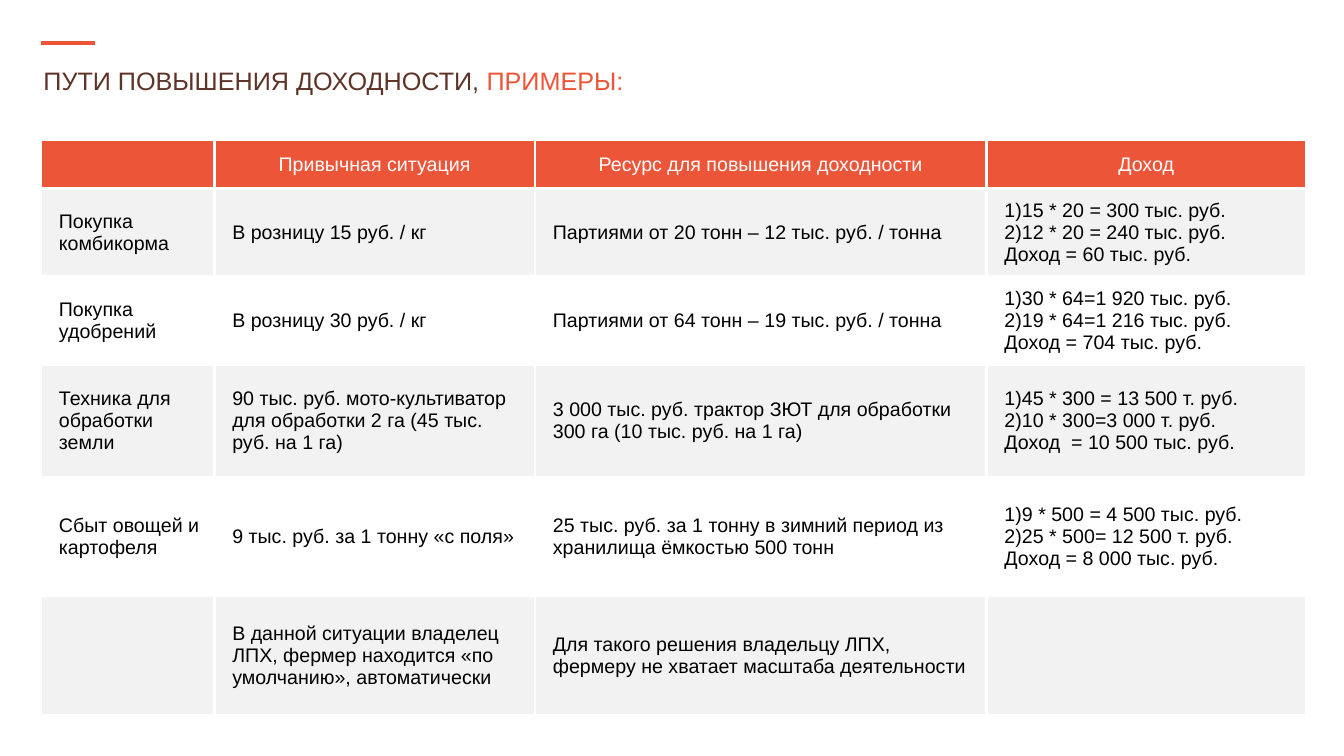
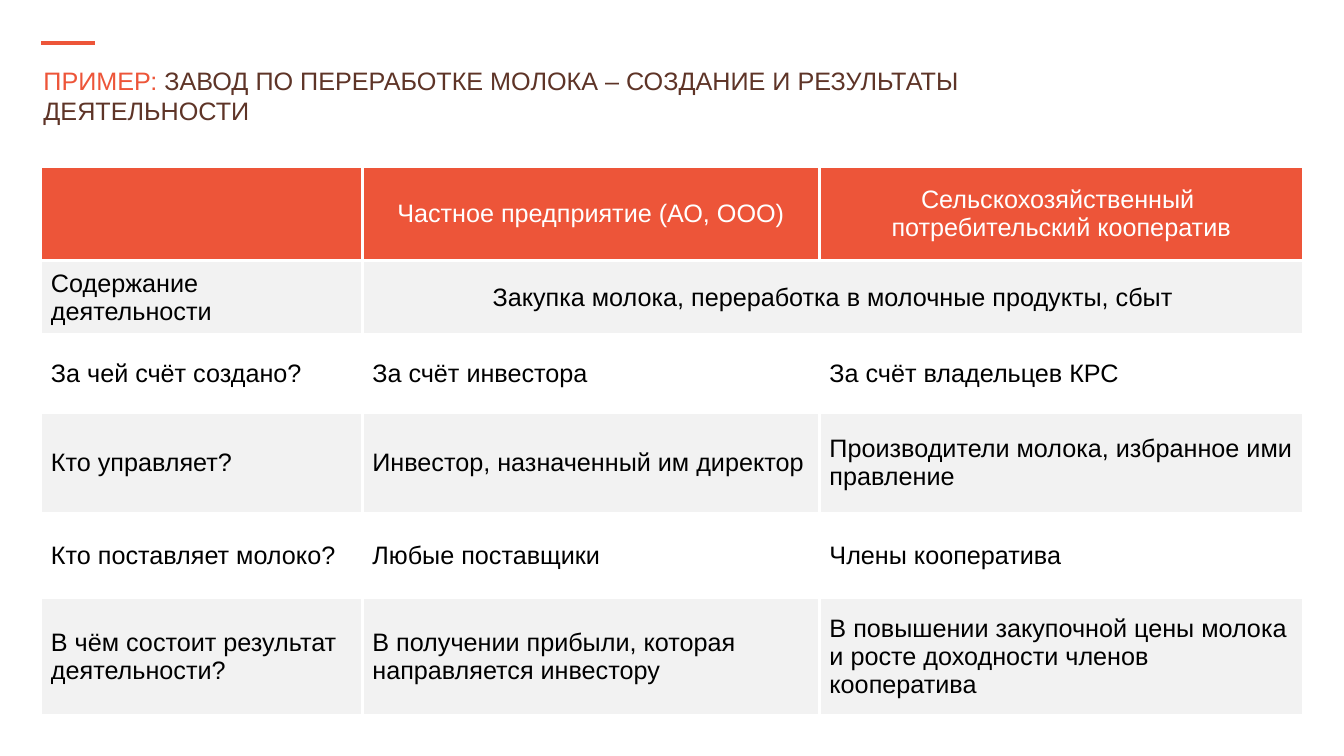
"""Builds two slides that compare ways of raising farm income."""
from lxml import etree
from pptx import Presentation
from pptx.dml.color import RGBColor
from pptx.enum.shapes import MSO_CONNECTOR
from pptx.enum.text import MSO_ANCHOR, MSO_AUTO_SIZE, PP_ALIGN
from pptx.oxml.ns import qn
from pptx.util import Cm, Pt

STRAIGHT = MSO_CONNECTOR.STRAIGHT
TOP, MIDDLE = MSO_ANCHOR.TOP, MSO_ANCHOR.MIDDLE
LEFT, CENTER = PP_ALIGN.LEFT, PP_ALIGN.CENTER
NO_AUTOFIT = MSO_AUTO_SIZE.NONE

COLORS = {
    "accent": "ED5539",
    "title": "5E3427",
    "band": "F2F2F2",
    "white": "FFFFFF",
    "text": "000000",
}
FONT = "Arial"
TITLE_ONLY = 5
TABLE_LEFT = 1.03

INCOME_ROWS = [
    ["", "Привычная ситуация", "Ресурс для повышения доходности", "Доход"],
    ["Покупка комбикорма", "В розницу 15 руб. / кг",
     "Партиями от 20 тонн – 12 тыс. руб. / тонна",
     "15 * 20 = 300 тыс. руб.\n12 * 20 = 240 тыс. руб.\nДоход = 60 тыс. руб."],
    ["Покупка удобрений", "В розницу 30 руб. / кг",
     "Партиями от 64 тонн – 19 тыс. руб. / тонна",
     "30 * 64=1 920 тыс. руб.\n19 * 64=1 216 тыс. руб.\nДоход = 704 тыс. руб."],
    ["Техника для обработки земли",
     "90 тыс. руб. мото-культиватор для обработки 2 га (45 тыс. руб. на 1 га)",
     "3 000 тыс. руб. трактор ЗЮТ для обработки 300 га (10 тыс. руб. на 1 га)",
     "45 * 300 = 13 500 т. руб.\n10 * 300=3 000 т. руб.\nДоход  = 10 500 тыс. руб."],
    ["Сбыт овощей и картофеля", "9 тыс. руб. за 1 тонну «с поля»",
     "25 тыс. руб. за 1 тонну в зимний период из хранилища ёмкостью 500 тонн",
     "9 * 500 = 4 500 тыс. руб.\n25 * 500= 12 500 т. руб.\nДоход = 8 000 тыс. руб."],
    ["", "В данной ситуации владелец ЛПХ, фермер находится «по умолчанию», автоматически",
     "Для такого решения владельцу ЛПХ, фермеру не хватает масштаба деятельности", ""],
]

DAIRY_ROWS = [
    ["", "Частное предприятие (АО, ООО)",
     "Сельскохозяйственный \nпотребительский кооператив"],
    ["Содержание деятельности",
     "Закупка молока, переработка в молочные продукты, сбыт", None],
    ["За чей счёт создано?", "За счёт инвестора", "За счёт владельцев КРС"],
    ["Кто управляет?", "Инвестор, назначенный им директор",
     "Производители молока, избранное ими правление"],
    ["Кто поставляет молоко?", "Любые поставщики", "Члены кооператива"],
    ["В чём состоит результат деятельности?",
     "В получении прибыли, которая направляется инвестору",
     "В повышении закупочной цены молока и росте доходности членов кооператива"],
]


def rgb(name):
    """Return the named palette colour."""
    return RGBColor.from_string(COLORS[name])


def write_text(paragraph, text, size=18, color="text", align=LEFT, indent=0, numbered=False):
    """Append a formatted run to a paragraph."""
    properties = paragraph._p.get_or_add_pPr()
    properties.set("marL", str(Cm(indent)))
    properties.set("indent", "0")
    if numbered:
        etree.SubElement(properties, qn("a:buAutoNum"), type="arabicParenR")
    paragraph.alignment = align
    run = paragraph.add_run()
    run.text = text
    run.font.name = FONT
    run.font.size = Pt(size)
    run.font.bold = False
    run.font.color.rgb = rgb(color)


class Deck:
    """Holds the presentation style and the current slide."""

    def __init__(self):
        """Start an empty widescreen presentation."""
        self.presentation = Presentation()
        self.presentation.slide_width = Cm(33.87)
        self.presentation.slide_height = Cm(19.05)
        self.slide = None

    def add_slide(self, *title_parts):
        """Add a slide with the accent line and a two-colour title."""
        layout = self.presentation.slide_layouts[TITLE_ONLY]
        self.slide = self.presentation.slides.add_slide(layout)
        self.add_accent_line()
        title = self.slide.shapes.title
        title.left, title.top = Cm(0.84), Cm(1.52)
        title.width, title.height = Cm(25.55), Cm(0.81)
        frame = title.text_frame
        frame.word_wrap = True
        frame.auto_size = NO_AUTOFIT
        frame.vertical_anchor = TOP
        for text, color in title_parts:
            write_text(frame.paragraphs[0], text, color=color)

    def add_accent_line(self):
        """Draw the short line above the title."""
        line = self.slide.shapes.add_connector(STRAIGHT, Cm(1.04), Cm(1.09), Cm(2.4), Cm(1.09))
        line.line.color.rgb = rgb("accent")
        line.line.width = Pt(3)
        etree.SubElement(line._element.spPr, qn("a:effectLst"))

    def add_table(self, rows, top, widths, heights, size, indent=0, numbered_column=None):
        """Add a banded table; None continues the cell on its left."""
        frame = self.slide.shapes.add_table(
            len(rows), len(widths), Cm(TABLE_LEFT), Cm(top), Cm(sum(widths)), Cm(sum(heights)))
        table = frame.table
        for column, width in zip(table.columns, widths):
            column.width = Cm(width)
        for row, height in zip(table.rows, heights):
            row.height = Cm(height)
        for row_index, texts in enumerate(rows):
            for column_index, text in enumerate(texts):
                cell = table.cell(row_index, column_index)
                self.style_cell(cell, row_index)
                if text is None:
                    table.cell(row_index, column_index - 1).merge(cell)
                elif text:
                    header = row_index == 0
                    merged = None in texts[column_index + 1:column_index + 2]
                    self.fill_cell(
                        cell, text, size=size,
                        color="white" if header else "text",
                        align=CENTER if header or merged else LEFT,
                        indent=0 if header else indent,
                        numbered=not header and column_index == numbered_column)

    def style_cell(self, cell, row_index):
        """Set the fill, anchor and white borders of a cell."""
        cell.vertical_anchor = MIDDLE
        cell.fill.solid()
        fill = "accent" if row_index == 0 else "band" if row_index % 2 else "white"
        cell.fill.fore_color.rgb = rgb(fill)
        properties = cell._tc.get_or_add_tcPr()
        for position, side in enumerate(("lnL", "lnR", "lnT", "lnB")):
            border = etree.Element(qn(f"a:{side}"), w=str(Pt(2.25)))
            solid = etree.SubElement(border, qn("a:solidFill"))
            etree.SubElement(solid, qn("a:srgbClr"), val=COLORS["white"])
            properties.insert(position, border)

    def fill_cell(self, cell, text, numbered=False, **style):
        """Write the lines of a cell, numbering all but the last if asked."""
        lines = text.split("\n")
        frame = cell.text_frame
        for index, line in enumerate(lines):
            paragraph = frame.add_paragraph() if index else frame.paragraphs[0]
            write_text(paragraph, line, numbered=numbered and index < len(lines) - 1, **style)


def main():
    """Build and save the presentation."""
    deck = Deck()
    deck.add_slide(("ПУТИ ПОВЫШЕНИЯ ДОХОДНОСТИ, ", "title"), ("ПРИМЕРЫ:", "accent"))
    deck.add_table(
        INCOME_ROWS, top=3.53, size=14, indent=0.2, numbered_column=3,
        widths=[4.37, 8.08, 11.38, 8.05], heights=[1.22, 2.21, 2.22, 2.84, 3, 3])
    deck.add_slide(
        ("ПРИМЕР: ", "accent"),
        ("ЗАВОД ПО ПЕРЕРАБОТКЕ МОЛОКА – СОЗДАНИЕ И РЕЗУЛЬТАТЫ ДЕЯТЕЛЬНОСТИ", "title"))
    deck.add_table(
        DAIRY_ROWS, top=4.19, size=18,
        widths=[8.1, 11.52, 12.19], heights=[2.38, 1.85, 1.98, 2.53, 2.13, 2.97])
    deck.presentation.save("out.pptx")


if __name__ == "__main__":
    main()
